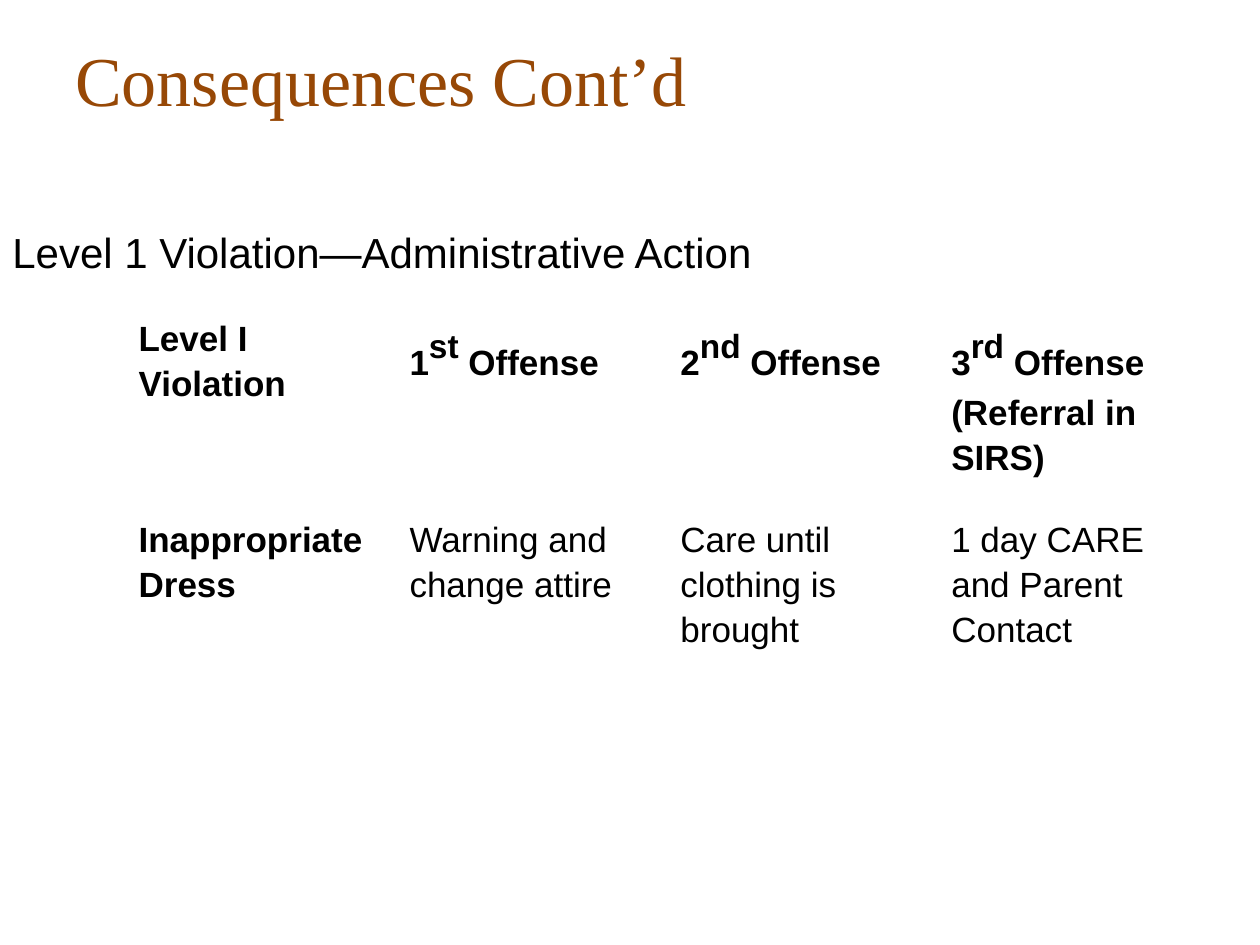
"""Build the slide on consequences of Level 1 violations."""
from pptx import Presentation
from pptx.dml.color import RGBColor
from pptx.enum.text import MSO_ANCHOR
from pptx.util import Inches, Pt

BROWN = RGBColor(0x97, 0x48, 0x06)
BLACK = RGBColor(0, 0, 0)

TITLE = ("Consequences Cont’d", (0.5, 0, 9, 1.25), "Times New Roman", 40, BROWN)
SUBTITLE = ("Level 1 Violation—Administrative Action", (0, 1.75, 6.67, 0.5), "Arial", 24, BLACK)
HEADINGS = [
    [["Level I Violation"]],
    [["1", "st", " Offense"]],
    [["2", "nd", " Offense"]],
    [["3", "rd", " Offense"], ["(Referral in SIRS)"]],
]
ACTIONS = [
    [["Inappropriate Dress"]],
    [["Warning and change attire"]],
    [["Care until clothing is brought"]],
    [["1 day CARE"], ["and Parent Contact"]],
]
ORDINALS = ("st", "nd", "rd")
COLUMN_WIDTH = 2.15
ROW_HEIGHTS = (1.1, 1.66)


def style_run(run, font_name, size, color, bold=False):
    font = run.font
    font.name, font.size, font.bold = font_name, Pt(size), bold
    font.color.rgb = color


def add_text(slide, text, box, font_name, size, color, anchor):
    shape = slide.shapes.add_textbox(*map(Inches, box))
    frame = shape.text_frame
    frame.word_wrap = True
    frame.vertical_anchor = anchor
    frame.text = text
    style_run(frame.paragraphs[0].runs[0], font_name, size, color)


def fill_cell(cell, lines, bold):
    cell.fill.background()
    cell.margin_left = cell.margin_right = Inches(0.1)
    cell.margin_top = cell.margin_bottom = Inches(0.1)
    frame = cell.text_frame
    frame.text = "\n".join("" for _ in lines)
    for paragraph, pieces in zip(frame.paragraphs, lines):
        paragraph.line_spacing = 1.15
        for piece in pieces:
            run = paragraph.add_run()
            run.text = piece
            raised = piece in ORDINALS
            style_run(run, "Arial", 33 if raised else 20, BLACK, bold)
            if raised:
                run.font._element.set("baseline", "30000")


def add_offense_table(slide):
    rows = [HEADINGS, ACTIONS]
    columns = len(HEADINGS)
    table = slide.shapes.add_table(
        len(rows), columns, Inches(1), Inches(2.39),
        Inches(COLUMN_WIDTH * columns), Inches(sum(ROW_HEIGHTS)),
    ).table
    table.first_row = table.horz_banding = False
    for row, height in zip(table.rows, ROW_HEIGHTS):
        row.height = Inches(height)
    for row_index, row in enumerate(rows):
        for column_index, lines in enumerate(row):
            bold = row_index == 0 or column_index == 0
            fill_cell(table.cell(row_index, column_index), lines, bold)


def main():
    presentation = Presentation()
    presentation.slide_width, presentation.slide_height = Inches(10), Inches(7.5)
    slide = presentation.slides.add_slide(presentation.slide_layouts[6])
    add_text(slide, *TITLE, MSO_ANCHOR.MIDDLE)
    add_text(slide, *SUBTITLE, MSO_ANCHOR.TOP)
    add_offense_table(slide)
    presentation.save("out.pptx")


if __name__ == "__main__":
    main()
